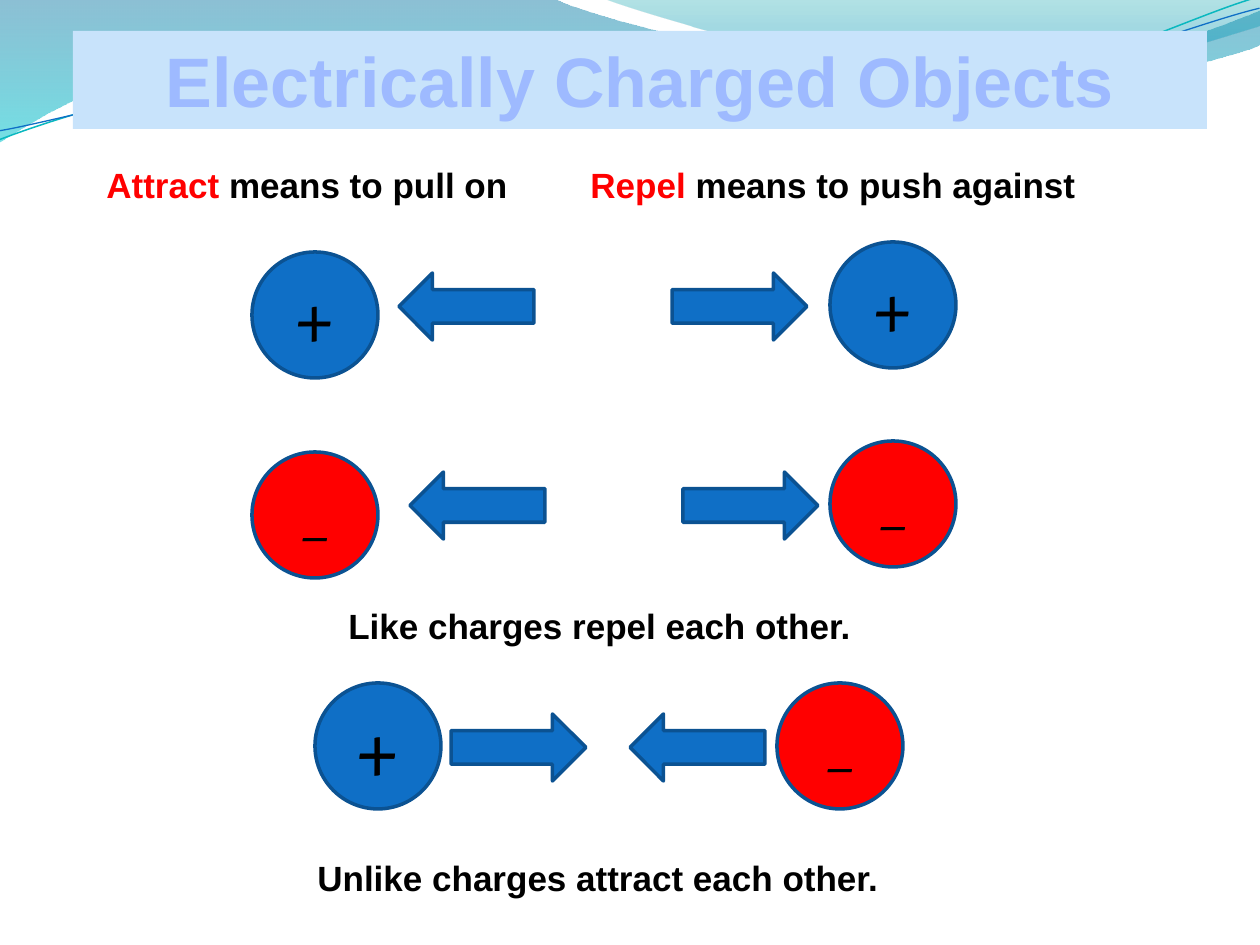
import lxml.etree
import pptx
import pptx.dml.color
import pptx.enum.shapes
import pptx.enum.text
import pptx.oxml.ns
import pptx.util

PX = 914400 / 126
SHAPE = pptx.enum.shapes.MSO_SHAPE
ANCHOR = pptx.enum.text.MSO_ANCHOR
ALIGN = pptx.enum.text.PP_ALIGN
GROW = pptx.enum.text.MSO_AUTO_SIZE.SHAPE_TO_FIT_TEXT
COLORS = {
    "blue": "0F6FC6", "blue_edge": "0B5292", "red": "FF0000", "black": "000000",
    "banner": "C8E3FB", "title": "9EBAFF", "teal_line": "0AB8BF",
    "wave_blue": "0074A1", "wave_cyan": "00C6CF",
    "crest_teal": "00A1A9", "crest_blue": "008BBF",
}
CHARGE = 126
ARROW_SIZE = (135, 67)
STRAND_TILT = -2.7

# Each segment holds one point (straight) or three (cubic curve).
WAVE = [
    [(0, -1)], [(554, -1)],
    [(600, 21), (837, 79), (955, 79)], [(1075, 79), (1207, 33), (1260, 11)],
    [(1261, 45)],
    [(1239, 55), (1096, 96), (940, 94)], [(784, 94), (481, 35), (324, 43)],
    [(163, 44), (58, 105), (-1, 142)],
]
CREST = [
    [(604, -1)],
    [(641, 14), (859, 78), (969, 82)], [(1079, 87), (1211, 40), (1260, 26)],
    [(1260, 0)],
]
TEAL_STRAND = [
    [(-3, 110)],
    [(58, 90), (199, 52), (350, 53)], [(499, 53), (745, 117), (896, 114)],
    [(1049, 109), (1184, 45), (1260, 27)],
]
BLUE_STRAND = [
    [(-2, 101)],
    [(57, 94), (207, 57), (357, 58)], [(509, 58), (750, 111), (902, 108)],
    [(1052, 104), (1188, 52), (1262, 38)],
]


def emu(*lengths):
    return [pptx.util.Emu(round(length * PX)) for length in lengths]


def rgb(name):
    return pptx.dml.color.RGBColor.from_string(COLORS[name])


def add_outline(slide, segments, box, close):
    """Add a freeform filling box, with its three-point segments curved."""
    anchors = [segment[-1] for segment in segments]
    builder = slide.shapes.build_freeform(*anchors[0], scale=PX)
    builder.add_line_segments(anchors[1:], close=close)
    outline = builder.convert_to_shape()
    outline.shadow.inherit = False
    outline.left, outline.top, outline.width, outline.height = emu(*box)

    qn = pptx.oxml.ns.qn
    route = next(outline.element.iter(qn("a:path")))
    route.set("w", str(box[2]))
    route.set("h", str(box[3]))
    for step, segment in zip(list(route), segments):
        for point in list(step):
            step.remove(point)
        if len(segment) == 3:
            curve = lxml.etree.Element(qn("a:cubicBezTo"))
            route.replace(step, curve)
            step = curve
        for x, y in segment:
            point = lxml.etree.SubElement(step, qn("a:pt"))
            point.set("x", str(x - box[0]))
            point.set("y", str(y - box[1]))
    return outline


def add_wave(slide, segments, box, stops):
    """Add a see-through gradient wave; stops are (position, colour, opacity %)."""
    wave = add_outline(slide, segments, box, True)
    wave.line.fill.background()
    wave.fill.gradient()
    wave.fill.gradient_angle = 270
    for stop, (position, color, _) in zip(wave.fill.gradient_stops, stops):
        stop.position = position
        stop.color.rgb = rgb(color)
    tints = wave.element.iter(pptx.oxml.ns.qn("a:srgbClr"))
    for tint, (_, _, opacity) in zip(tints, stops):
        alpha = lxml.etree.SubElement(tint, pptx.oxml.ns.qn("a:alpha"))
        alpha.set("val", str(opacity * 1000))


def add_strand(slide, segments, box, color, width):
    strand = add_outline(slide, segments, box, False)
    strand.rotation = STRAND_TILT
    strand.fill.background()
    strand.line.color.rgb = rgb(color)
    strand.line.width = pptx.util.Pt(width)


def add_run(paragraph, text, size, color, font="Arial"):
    run = paragraph.add_run()
    run.text = text
    run.font.name = font
    run.font.size = pptx.util.Pt(size)
    run.font.bold = True
    run.font.color.rgb = rgb(color)


def add_figure(slide, kind, box, fill, edge="blue_edge"):
    figure = slide.shapes.add_shape(kind, *emu(*box))
    figure.shadow.inherit = False
    figure.fill.solid()
    figure.fill.fore_color.rgb = rgb(fill)
    if edge:
        figure.line.color.rgb = rgb(edge)
        figure.line.width = pptx.util.Pt(2)
    else:
        figure.line.fill.background()
    return figure


def add_title(slide, text):
    banner = add_figure(slide, SHAPE.RECTANGLE, (73, 31, 1134, 98), "banner", None)
    banner.text_frame.vertical_anchor = ANCHOR.TOP
    banner.text_frame.word_wrap = True
    banner.text_frame.auto_size = GROW
    paragraph = banner.text_frame.paragraphs[0]
    paragraph.alignment = ALIGN.CENTER
    add_run(paragraph, text, 40, "title")


def add_charge(slide, left, top, sign, size):
    fill = "blue" if sign == "+" else "red"
    charge = add_figure(slide, SHAPE.OVAL, (left, top, CHARGE, CHARGE), fill)
    charge.text_frame.vertical_anchor = ANCHOR.MIDDLE
    paragraph = charge.text_frame.paragraphs[0]
    paragraph.alignment = ALIGN.CENTER
    add_run(paragraph, sign, size, "black", "Vollkorn")


def add_statement(slide, left, top, width, runs, wrap):
    statement = slide.shapes.add_textbox(*emu(left, top, width, 55))
    statement.text_frame.word_wrap = wrap
    statement.text_frame.auto_size = GROW
    for text, color in runs:
        add_run(statement.text_frame.paragraphs[0], text, 20, color)


def main():
    deck = pptx.Presentation()
    deck.slide_width, deck.slide_height = emu(1260, 945)
    slide = deck.slides.add_slide(deck.slide_layouts[6])

    add_wave(slide, WAVE, (-1, -1, 1262, 143),
             [(0, "wave_blue", 45), (1, "wave_cyan", 55)])
    add_wave(slide, CREST, (604, -1, 656, 88),
             [(0, "crest_teal", 30), (0.8, "crest_blue", 45)])
    add_strand(slide, TEAL_STRAND, (-3, 28, 1263, 89), "teal_line", 0.85)
    add_strand(slide, BLUE_STRAND, (-3, 38, 1264, 73), "blue", 0.75)
    add_title(slide, "Electrically Charged Objects")

    for left, top, sign, size in [
        (252, 252, "+", 40), (830, 242, "+", 40),
        (252, 452, "_", 28), (777, 683, "_", 28),
        (315, 683, "+", 44), (830, 441, "_", 28),
    ]:
        add_charge(slide, left, top, sign, size)

    left_arrow, right_arrow = SHAPE.LEFT_ARROW, SHAPE.RIGHT_ARROW
    for kind, left, top in [
        (left_arrow, 399, 273), (left_arrow, 410, 472),
        (right_arrow, 672, 273), (right_arrow, 683, 472),
        (right_arrow, 451, 714), (left_arrow, 630, 714),
    ]:
        add_figure(slide, kind, (left, top, *ARROW_SIZE), "blue")

    for left, top, width, text in [
        (336, 598, 532, "Like charges repel each other."),
        (305, 850, 591, "Unlike charges attract each other."),
    ]:
        add_statement(slide, left, top, width, [(text, "black")], False)
    for left, width, term, meaning in [
        (94, 441, "Attract", " means to pull on"),
        (578, 536, "Repel", " means to push against"),
    ]:
        add_statement(slide, left, 157, width, [(term, "red"), (meaning, "black")], True)

    deck.save("out.pptx")


if __name__ == "__main__":
    main()
